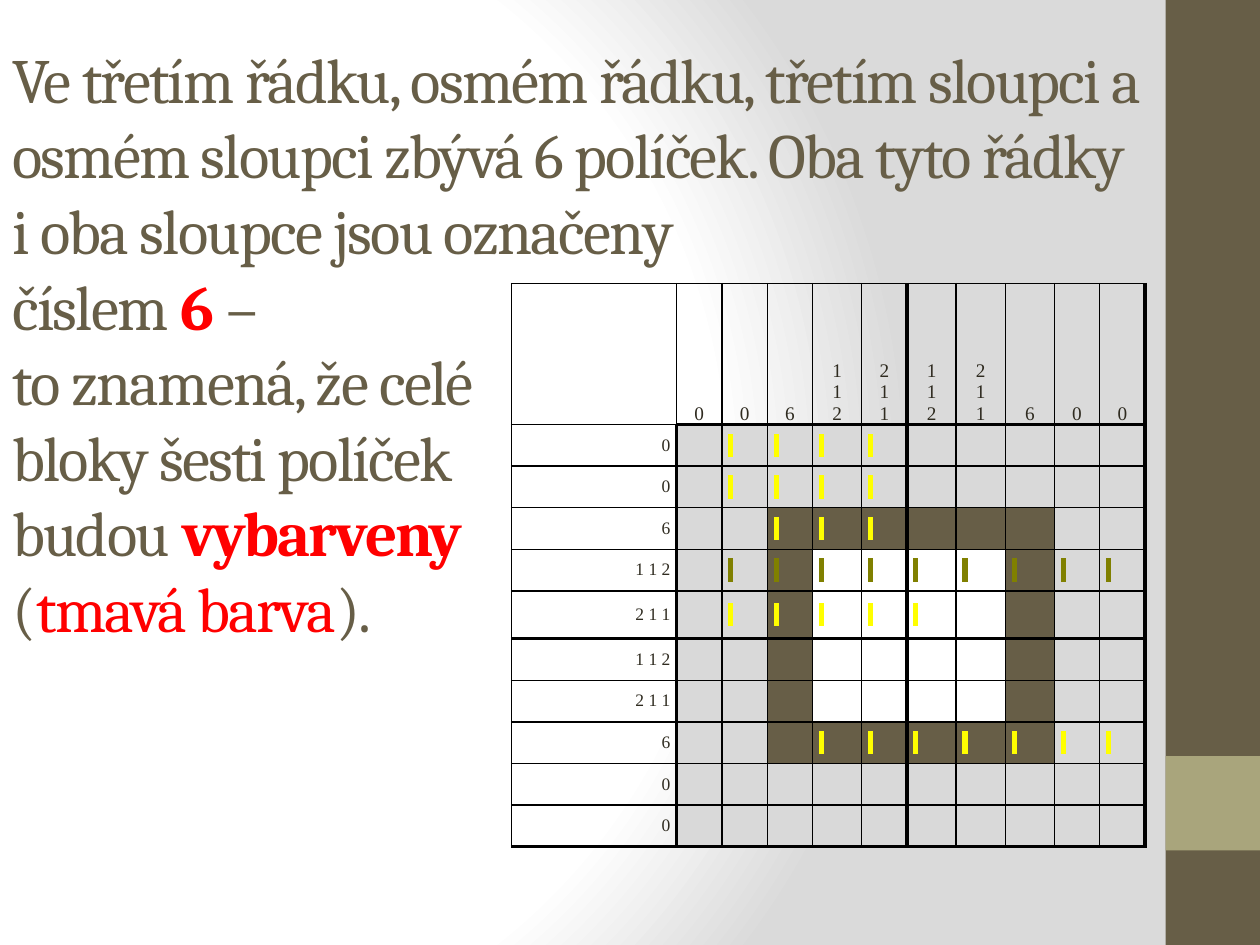
from dataclasses import dataclass

from pptx import Presentation
from pptx import util as u
from pptx.dml.color import RGBColor
from pptx.enum import shapes, text
from pptx.oxml import parse_xml
from pptx.oxml.ns import nsdecls, qn


@dataclass(frozen=True)
class Theme:
    dark: str = "675E47"
    band: str = "A9A57C"
    accent: str = "FF0000"
    ink: str = "2F2B20"
    crossed: str = "D9D9D9"
    open: str = "FFFFFF"
    mark: str = "FFFF00"
    olive: str = "808000"
    line: str = "000000"
    background: tuple = ((0, "FFFFFF"), (75, "FFFFFF"), (100, "DADADA"))
    title_font: str = "Cambria"
    table_font: str = "Times New Roman"
    title_size: int = 36
    column_clue_size: int = 11
    row_clue_size: int = 10
    mark_size: int = 12


COLUMN_CLUES = ["0", "0", "6", "112", "211", "112", "211", "6", "0", "0"]
ROW_CLUES = ["0", "0", "6", "1 1 2", "2 1 1", "1 1 2", "2 1 1", "6", "0", "0"]
COLUMN_WIDTHS = [1.31, 0.36, 0.36, 0.36, 0.39, 0.36, 0.39, 0.39, 0.39, 0.36, 0.36]
ROW_HEIGHTS = [1.12] + [0.33] * 4 + [0.38] + [0.33] * 5
MARKED_COLUMNS = {1: (2, 5), 2: (2, 5), 3: (3, 5), 4: (2, 10), 5: (2, 6), 8: (4, 10)}
OLIVE_ROW = 4
TITLE = [
    ("Ve třetím řádku, osmém řádku, třetím sloupci a osmém sloupci zbývá 6 políček. "
     "Oba tyto řádky i oba sloupce jsou označeny \nčíslem ", "dark", False),
    ("6", "accent", True),
    (" – \nto znamená, že celé \nbloky šesti políček \nbudou ", "dark", False),
    ("vybarveny \n", "accent", True),
    ("(", "dark", False),
    ("tmavá barva", "accent", False),
    (").", "dark", False),
]


class SlideBuilder:
    def __init__(self, slide, theme):
        self.slide = slide
        self.theme = theme

    def background(self):
        self.slide.background.fill.gradient()
        gradient = self.slide.element.find(".//" + qn("a:gradFill"))
        stops = "".join(
            f'<a:gs pos="{position * 1000}"><a:srgbClr val="{color}"/></a:gs>'
            for position, color in self.theme.background)
        gradient.getparent().replace(gradient, parse_xml(
            f'<a:gradFill {nsdecls("a")} rotWithShape="1"><a:gsLst>{stops}</a:gsLst>'
            '<a:path path="circle"><a:fillToRect l="20000" t="50000" r="100000" b="50000"/>'
            '</a:path></a:gradFill>'))

    def rectangle(self, left, top, width, height, color):
        shape = self.slide.shapes.add_shape(
            shapes.MSO_SHAPE.RECTANGLE, *map(u.Inches, (left, top, width, height)))
        shape.shadow.inherit = False
        shape.fill.solid()
        shape.fill.fore_color.rgb = RGBColor.from_string(color)
        shape.line.fill.background()

    def run(self, paragraph, words, font, size, color, bold=False):
        run = paragraph.add_run()
        run.text = words
        run.font.name = font
        run.font.size = u.Pt(size)
        run.font.bold = bold
        run.font.color.rgb = RGBColor.from_string(color)
        return run

    def title(self, left, top, width, height, runs):
        shape = self.slide.shapes.add_textbox(*map(u.Inches, (left, top, width, height)))
        frame = shape.text_frame
        frame.word_wrap = True
        frame.vertical_anchor = text.MSO_ANCHOR.BOTTOM
        paragraph = frame.paragraphs[0]
        for words, color, bold in runs:
            for index, line in enumerate(words.split("\n")):
                if index:
                    paragraph.add_line_break()
                if line:
                    run = self.run(paragraph, line, self.theme.title_font,
                                   self.theme.title_size, getattr(self.theme, color), bold)
                    run.font._element.set("spc", "-100")

    def table(self, left, top, widths, heights):
        frame = self.slide.shapes.add_table(
            len(heights), len(widths),
            *map(u.Inches, (left, top, sum(widths), sum(heights))))
        table = frame.table
        table.first_row = table.horz_banding = False
        for column, width in zip(table.columns, widths):
            column.width = u.Inches(width)
        for row, height in zip(table.rows, heights):
            row.height = u.Inches(height)
        return table

    def cell(self, cell, borders, fill=None, anchor=text.MSO_ANCHOR.MIDDLE):
        cell.margin_left = cell.margin_right = u.Inches(0.05)
        cell.margin_top = cell.margin_bottom = 0
        cell.vertical_anchor = anchor
        properties = cell._tc.get_or_add_tcPr()
        for side, width in zip("LRTB", borders):
            properties.append(parse_xml(
                f'<a:ln{side} {nsdecls("a")} w="{u.Pt(width)}"><a:solidFill>'
                f'<a:srgbClr val="{self.theme.line}"/></a:solidFill></a:ln{side}>'))
        if fill:
            cell.fill.solid()
            cell.fill.fore_color.rgb = RGBColor.from_string(fill)
        else:
            cell.fill.background()

    def clue(self, cell, lines, size, alignment):
        frame = cell.text_frame
        for index, line in enumerate(lines):
            paragraph = frame.add_paragraph() if index else frame.paragraphs[0]
            paragraph.alignment = alignment
            self.run(paragraph, line, self.theme.table_font, size, self.theme.ink)

    def mark(self, cell, color):
        run = self.run(cell.text_frame.paragraphs[0], " ", self.theme.table_font,
                       self.theme.mark_size, self.theme.ink)
        run.font._element.find(qn("a:solidFill")).addnext(parse_xml(
            f'<a:highlight {nsdecls("a")}><a:srgbClr val="{color}"/></a:highlight>'))


def border_width(edge, across):
    if edge in (6, 11):
        return 2.25
    return 1.5 if edge == 1 and across else 1


def square_color(theme, row, column):
    if not (3 <= row <= 8 and 3 <= column <= 8):
        return theme.crossed
    return theme.dark if {row, column} & {3, 8} else theme.open


def puzzle(builder):
    theme = builder.theme
    table = builder.table(4.06, 2.25, COLUMN_WIDTHS, ROW_HEIGHTS)
    for row in range(len(ROW_HEIGHTS)):
        first, last = MARKED_COLUMNS.get(row, (0, -1))
        for column in range(len(COLUMN_WIDTHS)):
            cell = table.cell(row, column)
            borders = [border_width(column, row), border_width(column + 1, row),
                       border_width(row, column), border_width(row + 1, column)]
            fill = square_color(theme, row, column) if row and column else None
            anchor = text.MSO_ANCHOR.MIDDLE if row else text.MSO_ANCHOR.BOTTOM
            builder.cell(cell, borders, fill, anchor)
            if column and not row:
                builder.clue(cell, COLUMN_CLUES[column - 1], theme.column_clue_size,
                             text.PP_ALIGN.CENTER)
            elif row and not column:
                builder.clue(cell, [ROW_CLUES[row - 1]], theme.row_clue_size,
                             text.PP_ALIGN.RIGHT)
            elif first <= column <= last:
                builder.mark(cell, theme.olive if row == OLIVE_ROW else theme.mark)


def main():
    presentation = Presentation()
    presentation.slide_width = u.Inches(10)
    presentation.slide_height = u.Inches(7.5)
    theme = Theme()
    builder = SlideBuilder(presentation.slides.add_slide(presentation.slide_layouts[6]), theme)
    builder.background()
    builder.rectangle(9.25, 0, 0.75, 7.5, theme.dark)
    builder.rectangle(9.25, 6, 0.75, 0.75, theme.band)
    builder.title(0, 0.21, 9.17, 4.96, TITLE)
    puzzle(builder)
    presentation.save("out.pptx")


if __name__ == "__main__":
    main()
